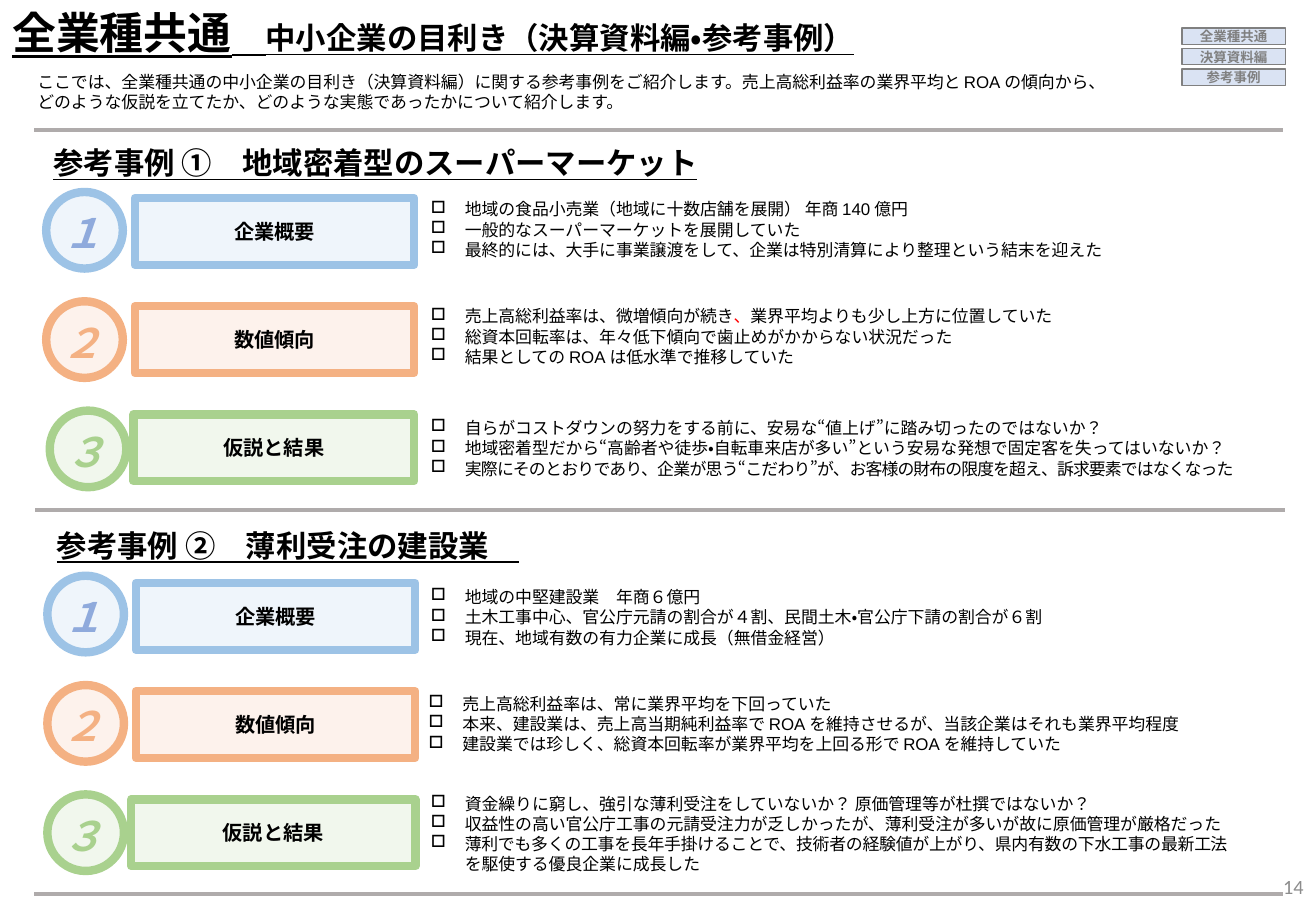
"""Build the slide of two reference cases for judging small companies."""
from lxml import etree
from pptx import Presentation
from pptx.dml.color import RGBColor
from pptx.enum.lang import MSO_LANGUAGE_ID
from pptx.enum.shapes import MSO_CONNECTOR, MSO_SHAPE
from pptx.enum.text import MSO_ANCHOR, MSO_AUTO_SIZE, PP_ALIGN
from pptx.oxml.ns import qn
from pptx.util import Pt

RECT, OVAL = MSO_SHAPE.RECTANGLE, MSO_SHAPE.OVAL
STRAIGHT = MSO_CONNECTOR.STRAIGHT
TOP, MIDDLE = MSO_ANCHOR.TOP, MSO_ANCHOR.MIDDLE
LEFT, CENTER, RIGHT = PP_ALIGN.LEFT, PP_ALIGN.CENTER, PP_ALIGN.RIGHT
NO_FIT = MSO_AUTO_SIZE.NONE
JAPANESE = MSO_LANGUAGE_ID.JAPANESE

COLORS = {
    "text": "000000", "alert": "FF0000", "rule": "AFABAB", "page": "8C8C8C",
    "tag": "DAE3F3", "tag_line": "808080",
    "blue": "9DC3E6", "blue_fill": "BDD7EE", "blue_digit": "8FAADC",
    "orange": "F4B183", "orange_fill": "F8CBAD", "orange_digit": "F4B183",
    "green": "A9D18E", "green_fill": "C5E0B4", "green_digit": "A9D18E",
}
STEPS = [("１", "企業概要", "blue", "Lato"),
         ("２", "数値傾向", "orange", "Lato"),
         ("３", "仮説と結果", "green", "Arial")]
TAGS = ["全業種共通", "決算資料編", "参考事例"]
RULES = [(20.2, 77), (20.9, 302.4), (20.2, 529.9)]
INTRO = [
    [("ここでは、全業種共通の中小企業の目利き（決算資料編）に関する参考事例をご紹介します。"
      "売上高総利益率の業界平均と", {}), ("ROAの傾向", {"font": "Arial"}), ("から、", {})],
    "どのような仮説を立てたか、どのような実態であったかについて紹介します。",
]
CASES = [
    {"title": "参考事例 ①　地域密着型のスーパーマーケット", "title_at": (24.5, 82.1),
     "circle_top": 113.8, "box_top": 117.4, "box_right": 245.5,
     "rows": [
         {"circle": 27.4, "digit": 47.9, "box": 79.9, "notes_at": (248.4, 114.5), "notes": [
             "地域の食品小売業（地域に十数店舗を展開） 年商140億円",
             "一般的なスーパーマーケットを展開していた",
             "最終的には、大手に事業譲渡をして、企業は特別清算により整理という結末を迎えた"]},
         {"circle": 27.4, "digit": 47.5, "box": 79.9, "notes_at": (248.4, 177.8), "notes": [
             [("売上高総利益率は、微増傾向が続き", {}), ("、", {"color": "alert"}),
              ("業界平均よりも少し上方に位置していた", {})],
             "総資本回転率は、年々低下傾向で歯止めがかからない状況だった",
             "結果としてのROAは低水準で推移していた"]},
         {"circle": 29.5, "digit": 49.7, "box": 79.2, "notes_at": (248.4, 244.1), "notes": [
             "自らがコストダウンの努力をする前に、安易な“値上げ”に踏み切ったのではないか？",
             "地域密着型だから“高齢者や徒歩・自転車来店が多い”という安易な発想で固定客を失ってはいないか？",
             [("実際にそのとおりであり、企業が思う“こだわり”が、", {"spacing": -0.4}),
              ("お客様の財布の限度を超え、訴求要素ではなくなった", {"spacing": -0.5})]]},
     ]},
    {"title": "参考事例 ②　薄利受注の建設業　", "title_at": (26.6, 308.9),
     "circle_top": 341.3, "box_top": 345.6, "box_right": 246.2,
     "rows": [
         {"circle": 28.1, "digit": 48.6, "box": 80.6, "notes_at": (248.4, 344.2), "notes": [
             "地域の中堅建設業　年商６億円",
             "土木工事中心、官公庁元請の割合が４割、民間土木・官公庁下請の割合が６割",
             "現在、地域有数の有力企業に成長（無借金経営）"]},
         {"circle": 28.1, "digit": 48.2, "box": 80.6, "notes_at": (247, 407.5), "notes": [
             "売上高総利益率は、常に業界平均を下回っていた",
             "本来、建設業は、売上高当期純利益率でROAを維持させるが、当該企業はそれも業界平均程度",
             "建設業では珍しく、総資本回転率が業界平均を上回る形でROAを維持していた"]},
         {"circle": 28.1, "digit": 48.2, "box": 77.8, "notes_at": (248.4, 466.6), "notes": [
             "資金繰りに窮し、強引な薄利受注をしていないか？ 原価管理等が杜撰ではないか？",
             "収益性の高い官公庁工事の元請受注力が乏しかったが、薄利受注が多いが故に原価管理が厳格だった",
             [("薄利でも多くの工事を長年手掛けることで、技術者の経験値が上がり、県内有数の下水工事の最新工法",
               {"spacing": -0.1}),
              ("を駆使する優良企業に成長した", {"new_line": True})]]},
     ]},
]


def rgb(name):
    return RGBColor.from_string(COLORS[name])


def add_run(p, text, size=10, font="Arial", color="text", bold=False,
            italic=False, underline=False, spacing=0, new_line=False):
    if new_line:
        p.add_line_break()
    r = p.add_run()
    r.text = text
    f = r.font
    f.size, f.name, f.bold, f.italic, f.underline = Pt(size), font, bold, italic, underline
    f.color.rgb = rgb(color)
    f.language_id = JAPANESE
    if spacing:
        r._r.get_or_add_rPr().set("spc", str(round(spacing * 100)))


def add_bullet(p, char="□", indent=20):
    pPr = p._p.get_or_add_pPr()
    pPr.set("marL", str(Pt(indent)))
    pPr.set("indent", str(-Pt(indent)))
    etree.SubElement(pPr, qn("a:buChar")).set("char", char)


def write(sp, paragraphs, align=LEFT, anchor=TOP, bullets=False, inset=None, **fmt):
    tf = sp.text_frame
    tf.word_wrap, tf.auto_size, tf.vertical_anchor = True, NO_FIT, anchor
    if inset is not None:
        tf.margin_left = tf.margin_right = tf.margin_top = tf.margin_bottom = Pt(inset)
    for i, runs in enumerate(paragraphs):
        p = tf.add_paragraph() if i else tf.paragraphs[0]
        p.alignment = align
        if bullets:
            add_bullet(p)
        for text, extra in [(runs, {})] if isinstance(runs, str) else runs:
            add_run(p, text, **{**fmt, **extra})


def add_text(s, x, y, w, h, paragraphs, **fmt):
    write(s.shapes.add_textbox(Pt(x), Pt(y), Pt(w), Pt(h)), paragraphs, **fmt)


def add_block(s, kind, x, y, w, h, fill, line, weight, opacity=None):
    sp = s.shapes.add_shape(kind, Pt(x), Pt(y), Pt(w), Pt(h))
    sp.shadow.inherit = False
    sp.fill.solid()
    sp.fill.fore_color.rgb = rgb(fill)
    sp.line.color.rgb = rgb(line)
    sp.line.width = Pt(weight)
    if opacity:
        clr = sp.fill._xPr.find(qn("a:solidFill"))[0]
        etree.SubElement(clr, qn("a:alpha")).set("val", str(opacity * 1000))
    return sp


def add_rule(s, x, y, length=740.5):
    c = s.shapes.add_connector(STRAIGHT, Pt(x), Pt(y), Pt(x + length), Pt(y))
    c.line.color.rgb = rgb("rule")
    c.line.width = Pt(2.25)
    etree.SubElement(c._element.spPr, qn("a:effectLst"))


def add_title(s):
    sp = s.shapes.title
    sp.left, sp.top, sp.width, sp.height = Pt(0), Pt(0), Pt(572.4), Pt(38.9)
    write(sp, [[("全業種共通", {"size": 26}), ("　", {"size": 20}),
                ("中小企業の目利き（決算資料編・参考事例）", {"size": 18})]],
          bold=True, underline=True)


def add_case(s, case):
    x, y = case["title_at"]
    add_text(s, x, y, 474.5, 28.8, [case["title"]], size=18, bold=True, underline=True)
    for i, (row, (digit, label, hue, font)) in enumerate(zip(case["rows"], STEPS)):
        circle_y = case["circle_top"] + 64.8 * i
        look = (hue + "_fill", hue, 5, 23)
        add_block(s, OVAL, row["circle"], circle_y, 45.4, 45.4, *look)
        box = add_block(s, RECT, row["box"], case["box_top"] + 64.1 * i,
                        case["box_right"] - row["box"], 39.6, *look)
        write(box, [label], align=CENTER, anchor=MIDDLE, size=12, bold=True)
        add_text(s, row["digit"] - 18, circle_y + 6.1, 36, 36, [digit], align=CENTER,
                 size=24, font=font, color=hue + "_digit", bold=True, italic=True)
        add_text(s, *row["notes_at"], 501.8, 44, row["notes"], bullets=True)


def main():
    prs = Presentation()
    prs.slide_width, prs.slide_height = Pt(780), Pt(540)
    s = prs.slides.add_slide(prs.slide_layouts[5])
    add_title(s)
    add_text(s, 15.1, 38.9, 660.2, 31.7, INTRO, font="Calibri")
    for i, tag in enumerate(TAGS):
        sp = add_block(s, RECT, 700.6, 16.6 + 12.2 * i, 61.2, 9.7, "tag", "tag_line", 0.75)
        write(sp, [tag], align=CENTER, anchor=MIDDLE, inset=0, size=8,
              font="Calibri", color="tag_line", bold=True)
    for x, y in RULES:
        add_rule(s, x, y)
    for case in CASES:
        add_case(s, case)
    add_text(s, 741.6, 511.2, 38.2, 28.8, ["14"], align=RIGHT, anchor=MIDDLE,
             size=12, font="Calibri", color="page")
    prs.save("out.pptx")


if __name__ == "__main__":
    main()
